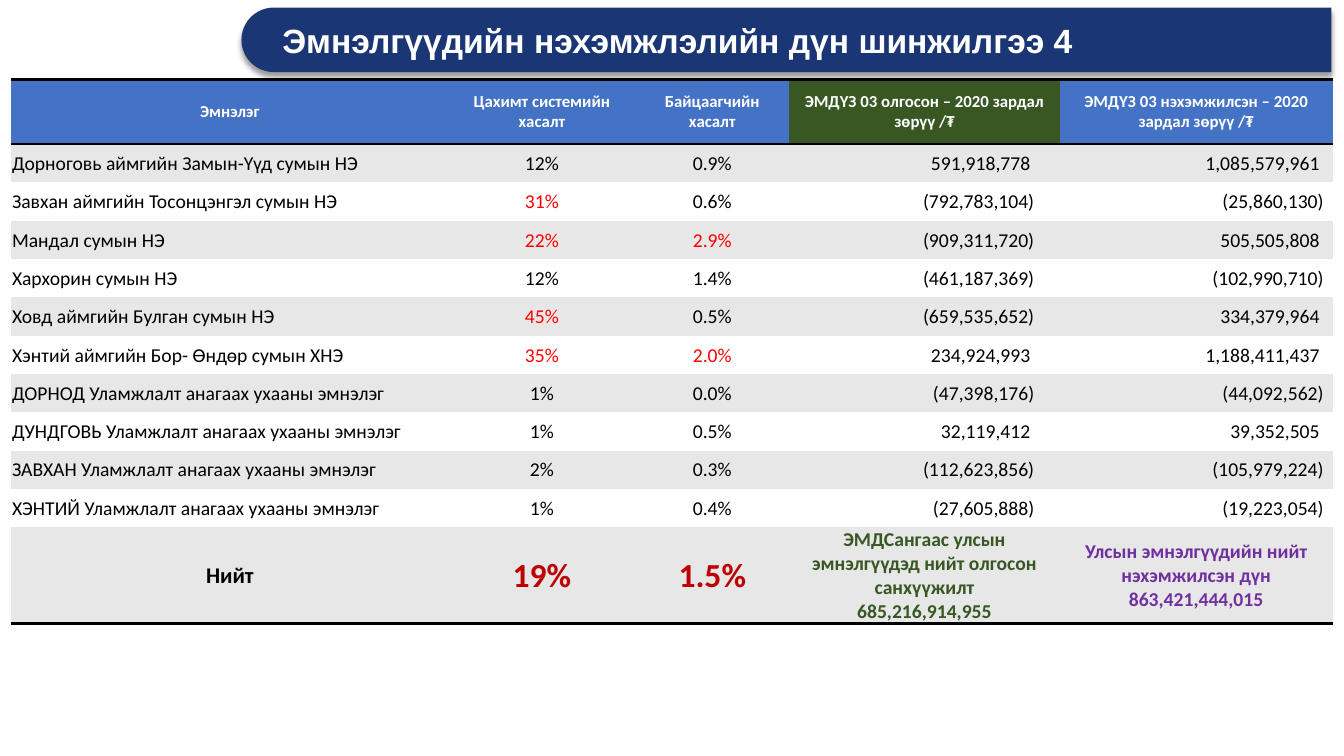
from lxml.etree import SubElement
from pptx import Presentation
from pptx.dml.color import RGBColor
from pptx.enum.shapes import MSO_SHAPE as Preset
from pptx.enum.text import MSO_ANCHOR as Anchor, MSO_AUTO_SIZE as AutoSize, PP_ALIGN as Align
from pptx.oxml import parse_xml
from pptx.oxml.ns import nsdecls, qn
from pptx.util import Inches, Pt

NAVY, BLUE, GREEN, GREY = "1A3675", "4472C4", "385723", "E7E7E7"
WHITE, BLACK, RED, DARK_RED, PURPLE = "FFFFFF", "000000", "FF0000", "C00000", "7030A0"
NO_GRID_STYLE = "{2D5ABB26-0587-4C30-8999-92F81FD0307C}"


def color(value):
    return RGBColor.from_string(value)


def write(frame, lines, size, shade, bold, align, font="Calibri"):
    for number, line in enumerate(lines):
        para = frame.add_paragraph() if number else frame.paragraphs[0]
        para.alignment = align
        span = para.add_run()
        span.text = line
        span.font.name, span.font.size, span.font.bold = font, Pt(size), bold
        span.font.color.rgb = color(shade)


deck = Presentation()
deck.slide_width, deck.slide_height = Inches(13.33), Inches(7.5)
page = deck.slides.add_slide(deck.slide_layouts[5])

# Title
title = page.shapes.title
title.left, title.top, title.width, title.height = map(Inches, (2.7, 0.1, 10.36, 0.64))
title.text_frame.auto_size = AutoSize.NONE
title.text_frame.vertical_anchor = Anchor.MIDDLE
write(title.text_frame, ["Эмнэлгүүдийн нэхэмжлэлийн дүн шинжилгээ 4"], 24, WHITE, True, Align.LEFT, "Arial")
title.text_frame.paragraphs[0].line_spacing = 0.9

# Banner behind the title, turned so its round end points left
banner = page.shapes.add_shape(Preset.ROUND_2_SAME_RECTANGLE, *map(Inches, (7.48, -5.01, 0.64, 10.81)))
banner.rotation = 270
banner.adjustments[0], banner.adjustments[1] = 0.5, 0
banner.fill.solid()
banner.fill.fore_color.rgb = color(NAVY)
banner.line.fill.background()
banner.shadow.inherit = False
effects = banner._element.spPr.find(qn("a:effectLst"))
shadow = SubElement(effects, qn("a:outerShdw"), blurRad=str(Pt(4)), dist=str(Pt(3)), dir="5400000", rotWithShape="0")
shade = SubElement(shadow, qn("a:srgbClr"), val=BLACK)
SubElement(shade, qn("a:alpha"), val="40000")
title._element.addprevious(banner._element)

# Table content
headings = ["Эмнэлэг", "Цахимт системийн хасалт", "Байцаагчийн хасалт",
            "ЭМДҮЗ 03 олгосон – 2020 зардал зөрүү /₮",
            "ЭМДҮЗ 03 нэхэмжилсэн – 2020 зардал зөрүү /₮"]
hospitals = [
    ("Дорноговь аймгийн Замын-Үүд сумын НЭ", "12%", "0.9%", "591,918,778", "1,085,579,961"),
    ("Завхан аймгийн Тосонцэнгэл сумын НЭ", "31%", "0.6%", "(792,783,104)", "(25,860,130)"),
    ("Мандал сумын НЭ", "22%", "2.9%", "(909,311,720)", "505,505,808"),
    ("Хархорин сумын НЭ", "12%", "1.4%", "(461,187,369)", "(102,990,710)"),
    ("Ховд аймгийн Булган сумын НЭ", "45%", "0.5%", "(659,535,652)", "334,379,964"),
    ("Хэнтий аймгийн Бор- Өндөр сумын ХНЭ", "35%", "2.0%", "234,924,993", "1,188,411,437"),
    ("ДОРНОД Уламжлалт анагаах ухааны эмнэлэг", "1%", "0.0%", "(47,398,176)", "(44,092,562)"),
    ("ДУНДГОВЬ Уламжлалт анагаах ухааны эмнэлэг", "1%", "0.5%", "32,119,412", "39,352,505"),
    ("ЗАВХАН Уламжлалт анагаах ухааны эмнэлэг", "2%", "0.3%", "(112,623,856)", "(105,979,224)"),
    ("ХЭНТИЙ Уламжлалт анагаах ухааны эмнэлэг", "1%", "0.4%", "(27,605,888)", "(19,223,054)"),
]
totals = [
    (["Нийт"], 16, BLACK),
    (["19%"], 24, DARK_RED),
    (["1.5%"], 24, DARK_RED),
    (["ЭМДСангаас улсын эмнэлгүүдэд нийт олгосон санхүүжилт", "685,216,914,955"], 14, GREEN),
    (["Улсын эмнэлгүүдийн нийт нэхэмжилсэн дүн 863,421,444,015"], 14, PURPLE),
]
red_cells = {"31%", "22%", "45%", "35%", "2.9%", "2.0%"}
amount_margins = {3: 0.25, 4: 0.09}
last = len(hospitals) + 1

# Table grid
widths = [4.34, 1.85, 1.53, 2.68, 2.71]
heights = [0.64] + [0.38] * len(hospitals) + [0.92]
table = page.shapes.add_table(len(heights), len(widths), Inches(0.11), Inches(0.79),
                              Inches(sum(widths)), Inches(sum(heights))).table
table.first_row = table.horz_banding = False
table._tbl.tblPr.find(qn("a:tableStyleId")).text = NO_GRID_STYLE
for column, width in zip(table.columns, widths):
    column.width = Inches(width)
for row, height in zip(table.rows, heights):
    row.height = Inches(height)

# Table cells
for row in range(last + 1):
    for column in range(len(widths)):
        cell = table.cell(row, column)
        cell.vertical_anchor = Anchor.MIDDLE
        cell.fill.solid()
        if row == 0:
            fill, edges = (GREEN if column == 3 else BLUE), ["lnB", "lnT"]
            write(cell.text_frame, [headings[column]], 12, WHITE, True, Align.CENTER)
        else:
            fill, edges = (GREY if row % 2 else WHITE), []
            cell.margin_left = cell.margin_right = cell.margin_top = Inches(0.01)
            cell.margin_bottom = 0
            if row == last:
                edges = ["lnB"]
                lines, size, shade = totals[column]
                write(cell.text_frame, lines, size, shade, True, Align.CENTER)
            else:
                value = hospitals[row - 1][column]
                align = Align.LEFT if column == 0 else Align.CENTER
                if column in amount_margins:
                    align = Align.RIGHT
                    gap = 0 if value.endswith(")") else 0.04
                    cell.margin_right = Inches(amount_margins[column] + gap)
                write(cell.text_frame, [value], 14, RED if value in red_cells else BLACK, False, align)
        cell.fill.fore_color.rgb = color(fill)
        for edge in edges:
            cell._tc.tcPr.insert(0, parse_xml(
                f'<a:{edge} {nsdecls("a")} w="{Pt(2)}"><a:solidFill>'
                f'<a:srgbClr val="{BLACK}"/></a:solidFill></a:{edge}>'))

deck.save("out.pptx")
